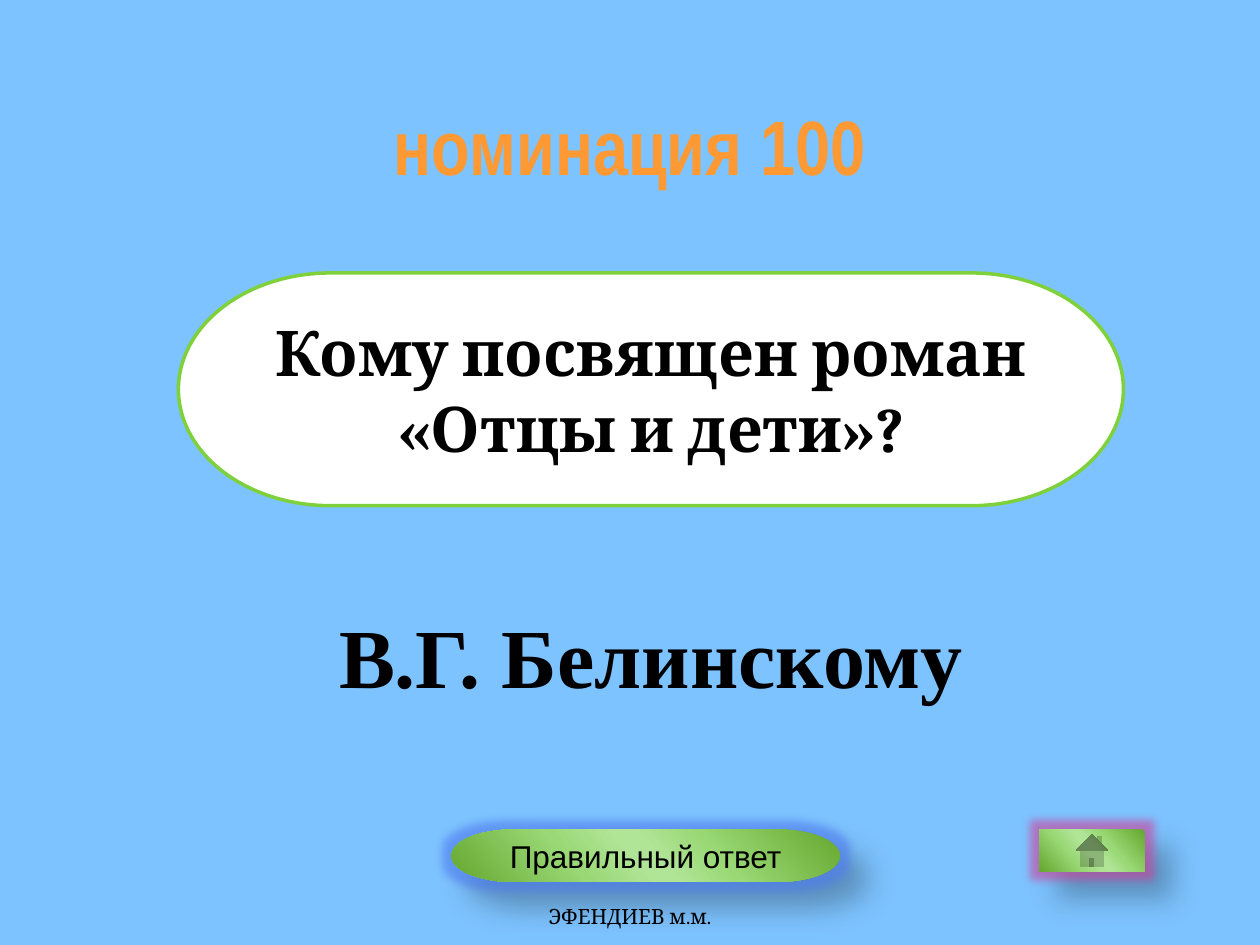
from dataclasses import dataclass

from lxml import etree
from pptx import Presentation
from pptx.dml.color import RGBColor
from pptx.enum import shapes, text
from pptx.oxml import ns
from pptx.util import Pt


@dataclass(frozen=True)
class Theme:
    background: str = "7DC3FF"
    ink: str = "000000"
    title: str = "FF9933"
    panel: str = "FFFFFF"
    panel_line: str = "7FD13B"
    answer_glow: str = "4F7CF0"
    home_glow: str = "D0409A"
    button_stops: tuple = ((0, "66A72F"), (33, "99D874"), (47, "B0E496"),
                           (53, "B0E496"), (68, "9AD876"), (100, "66A72F"))
    answer_size: int = 48
    title_size: int = 44
    question_size: int = 36
    button_size: int = 18
    footer_size: int = 12


THEME = Theme()
SHAPE = shapes.MSO_SHAPE
ANCHOR = text.MSO_ANCHOR


def rgb(value):
    return RGBColor.from_string(value)


def write(sp, content, *, font, size, color=THEME.ink, bold=False,
          anchor=ANCHOR.MIDDLE, before=0):
    tf = sp.text_frame
    tf.word_wrap = True
    tf.vertical_anchor = anchor
    p = tf.paragraphs[0]
    p.alignment = text.PP_ALIGN.CENTER
    p.space_before = Pt(before)
    r = p.add_run()
    r.text = content
    r.font.name = font
    r.font.size = Pt(size)
    r.font.bold = bold
    r.font.color.rgb = rgb(color)


def add_label(s, box, content, **style):
    sp = s.shapes.add_textbox(*map(Pt, box))
    write(sp, content, **style)


def add_panel(s, box):
    sp = s.shapes.add_shape(SHAPE.FLOWCHART_TERMINATOR, *map(Pt, box))
    sp.shadow.inherit = False
    sp.fill.solid()
    sp.fill.fore_color.rgb = rgb(THEME.panel)
    sp.line.color.rgb = rgb(THEME.panel_line)
    sp.line.width = Pt(2)
    return sp


def child(parent, tag, **attributes):
    return etree.SubElement(parent, ns.qn(tag),
                            {k: str(int(v)) for k, v in attributes.items()})


def add_color(parent, value, alpha=100):
    color = child(parent, "a:srgbClr")
    color.set("val", value)
    if alpha < 100:
        child(color, "a:alpha", val=alpha * 1000)


def add_button(s, kind, box, glow_color):
    """Add a borderless gradient button with a glow and a soft shadow."""
    sp = s.shapes.add_shape(kind, *map(Pt, box))
    sp.shadow.inherit = False
    sp.line.fill.background()

    sp.fill.gradient()
    sp.fill.gradient_angle = 360 - 139
    stops = sp.element.spPr.find(".//" + ns.qn("a:gsLst"))
    for old in list(stops):
        stops.remove(old)
    for position, color in THEME.button_stops:
        add_color(child(stops, "a:gs", pos=position * 1000), color)

    effects = sp.element.spPr.find(ns.qn("a:effectLst"))
    add_color(child(effects, "a:glow", rad=Pt(10)), glow_color, 60)
    shadow = child(effects, "a:outerShdw", blurRad=Pt(15), dist=Pt(18),
                   dir=45 * 60000, rotWithShape=0)
    add_color(shadow, THEME.ink, 26)
    return sp


def main():
    prs = Presentation()
    prs.slide_width, prs.slide_height = Pt(720), Pt(540)
    s = prs.slides.add_slide(prs.slide_layouts[6])
    s.background.fill.solid()
    s.background.fill.fore_color.rgb = rgb(THEME.background)

    add_label(s, (126, 342, 492, 65.5), "В.Г. Белинскому",
              font="Times New Roman", size=THEME.answer_size, bold=True,
              anchor=ANCHOR.TOP, before=6)
    question = add_panel(s, (102, 156, 540, 133))
    write(question, "Кому посвящен роман «Отцы и дети»?",
          font="Cambria", size=THEME.question_size, bold=True)
    add_label(s, (180, 57.6, 360, 50.4), "номинация 100",
              font="Arial Narrow", size=THEME.title_size, color=THEME.title,
              bold=True, before=5)

    add_button(s, SHAPE.ACTION_BUTTON_HOME, (594, 474, 60, 24),
               THEME.home_glow)
    reveal = add_button(s, SHAPE.FLOWCHART_TERMINATOR, (258, 474, 222, 30),
                        THEME.answer_glow)
    write(reveal, "Правильный ответ", font="Arial", size=THEME.button_size)
    add_label(s, (246, 505.5, 228, 28.8), "ЭФЕНДИЕВ м.м.", font="Cambria",
              size=THEME.footer_size, anchor=ANCHOR.BOTTOM)

    prs.save("out.pptx")


if __name__ == "__main__":
    main()
